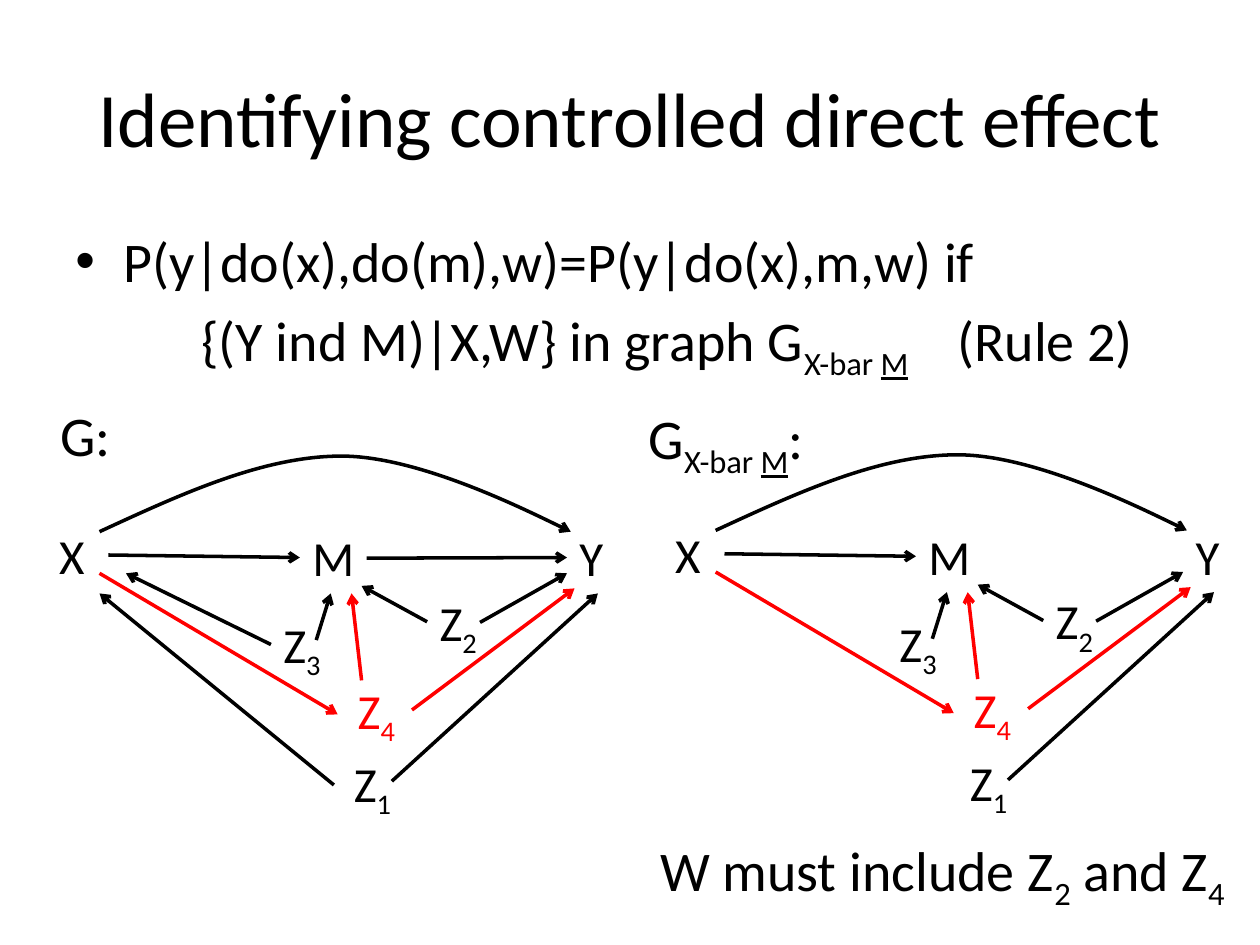
from pptx import Presentation
from pptx.dml.color import RGBColor
from pptx.enum.shapes import MSO_CONNECTOR as Conn
from pptx.enum.text import MSO_ANCHOR as Anchor, PP_ALIGN as Align
from pptx.oxml.ns import qn
from pptx.util import Inches, Pt
from lxml.etree import SubElement

BLACK = RGBColor(0, 0, 0)
RED = RGBColor(255, 0, 0)
FONT = "Calibri"
TOP, LEFT, BOTTOM, RIGHT = range(4)

TITLE = [("Identifying controlled direct effect", "")]
RULE = [("P(y|do(x),do(m),w)=P(y|do(x),m,w) if", "")]
CUT = [("G", ""), ("X-bar ", "sub"), ("M", "sub line")]
WHERE = [("{(Y ind M)|X,W} in graph ", ""), *CUT, ("\t(Rule 2)", "")]
NEED = [("W must include Z", ""), ("2", "sub"), (" and Z", ""), ("4", "sub")]

NODES = {
    "X": (0.37, 4.12, 0.49, BLACK),
    "M": (2.38, 4.14, 0.49, BLACK),
    "Y": (4.5, 4.14, 0.49, BLACK),
    "Z4": (2.74, 5.35, 0.53, RED),
    "Z2": (3.39, 4.65, 0.53, BLACK),
    "Z3": (2.15, 4.83, 0.53, BLACK),
    "Z1": (2.71, 5.93, 0.53, BLACK),
}
TALL = 0.57
EDGES = [
    (("X", RIGHT), ("M", LEFT), BLACK),
    ((3.81, 4.94), (4.5, 4.55), BLACK),
    ((0.79, 4.55), (2.68, 5.67), RED),
    (("Z4", RIGHT), (4.56, 4.67), RED),
    (("Z2", LEFT), (2.87, 4.65), BLACK),
    ((2.51, 5.08), ("M", BOTTOM), BLACK),
    ((2.87, 5.4), (2.79, 4.71), RED),
    ((3.11, 6.2), ("Y", BOTTOM), BLACK),
]
EXTRA = [
    ((2.91, 4.43), ("Y", LEFT), BLACK),
    (("Z3", LEFT), (1, 4.55), BLACK),
    ((2.65, 6.23), (0.79, 4.71), BLACK),
]
ARC = [(0.79, 4.22), (1.44, 3.92), (2.09, 3.62), (2.71, 3.62),
       (3.33, 3.62), (4.53, 4.22), (4.53, 4.22)]
GRAPHS = [(0, 0, EDGES + EXTRA), (4.89, -0.01, EDGES)]


def write(para, runs, size, color=BLACK):
    for text, style in runs:
        run = para.add_run()
        run.text = text
        font = run.font
        font.name, font.size = FONT, Pt(size)
        font.color.rgb = color
        if "sub" in style:
            run._r.get_or_add_rPr().set("baseline", "-25000")
        if "line" in style:
            font.underline = True


def label(shapes, box, runs, size=32, color=BLACK, wrap=True):
    shape = shapes.add_textbox(*map(Inches, box))
    shape.text_frame.word_wrap = wrap
    write(shape.text_frame.paragraphs[0], runs, size, color)
    return shape


def arrow(shape, color):
    shape.line.color.rgb = color
    shape.line.width = Pt(2)
    props = shape._element.spPr
    SubElement(props.find(qn("a:ln")), qn("a:tailEnd"), type="arrow")
    if props.find(qn("a:effectLst")) is None:
        SubElement(props, qn("a:effectLst"))


def spot(end, boxes, dx, dy):
    if end[0] not in boxes:
        return Inches(end[0] + dx), Inches(end[1] + dy)
    box = boxes[end[0]]
    fx, fy = [(0.5, 0), (0, 0.5), (0.5, 1), (1, 0.5)][end[1]]
    return int(box.left + fx * box.width), int(box.top + fy * box.height)


def curve(shapes, points):
    pen = shapes.build_freeform(*points[0], scale=Inches(1) / 100)
    pen.add_line_segments(points[1:], close=False)
    shape = pen.convert_to_shape()
    shape.shadow.inherit = False
    shape.fill.background()
    route = next(shape._element.iter(qn("a:path")))
    legs = route.findall(qn("a:lnTo"))
    for i in range(0, len(legs), 3):
        bend = SubElement(route, qn("a:cubicBezTo"))
        for leg in legs[i:i + 3]:
            bend.append(leg[0])
            route.remove(leg)
    arrow(shape, BLACK)


def graph(slide, dx, dy, edges):
    shapes = slide.shapes.add_group_shape().shapes
    boxes = {}
    for name, (x, y, wide, color) in NODES.items():
        runs = [(name[0], "")] + [(n, "sub") for n in name[1:]]
        boxes[name] = label(shapes, (x + dx, y + dy, wide, TALL), runs, 28, color)
    for start, stop, color in edges:
        ends = spot(start, boxes, dx, dy) + spot(stop, boxes, dx, dy)
        line = shapes.add_connector(Conn.STRAIGHT, *ends)
        if start[0] in boxes:
            line.begin_connect(boxes[start[0]], start[1])
        if stop[0] in boxes:
            line.end_connect(boxes[stop[0]], stop[1])
        arrow(line, color)
    curve(shapes, [(round((x + dx) * 100), round((y + dy) * 100)) for x, y in ARC])


def body(slide):
    frame = label(slide.shapes, (0.5, 1.75, 9, 4.95), RULE).text_frame
    first, second = frame.paragraphs[0], frame.add_paragraph()
    write(second, WHERE, 32)
    for para, margin, indent in [(first, 0.38, -0.38), (second, 0, 1)]:
        para.space_before = Pt(6.4)
        props = para._p.get_or_add_pPr()
        props.set("marL", str(Inches(margin)))
        props.set("indent", str(Inches(indent)))
    props = first._p.pPr
    SubElement(props, qn("a:buFont"), typeface="Arial")
    SubElement(props, qn("a:buChar"), char="•")
    tabs = SubElement(second._p.pPr, qn("a:tabLst"))
    SubElement(tabs, qn("a:tab"), pos=str(Inches(7.11)), algn="l")


def main():
    deck = Presentation()
    deck.slide_width, deck.slide_height = Inches(10), Inches(7.5)
    slide = deck.slides.add_slide(deck.slide_layouts[6])
    shapes = slide.shapes
    title = label(shapes, (0.5, 0.3, 9, 1.25), TITLE, 44).text_frame
    title.vertical_anchor = Anchor.MIDDLE
    title.paragraphs[0].alignment = Align.CENTER
    body(slide)
    label(shapes, (0.38, 3.13, 0.61, 0.64), [("G:", "")], wrap=False)
    label(shapes, (5.05, 3.15, 1.58, 0.64), CUT + [(":", "")], wrap=False)
    for dx, dy, edges in GRAPHS:
        graph(slide, dx, dy, edges)
    label(shapes, (5.14, 6.58, 4.82, 0.64), NEED)
    deck.save("out.pptx")


if __name__ == "__main__":
    main()
